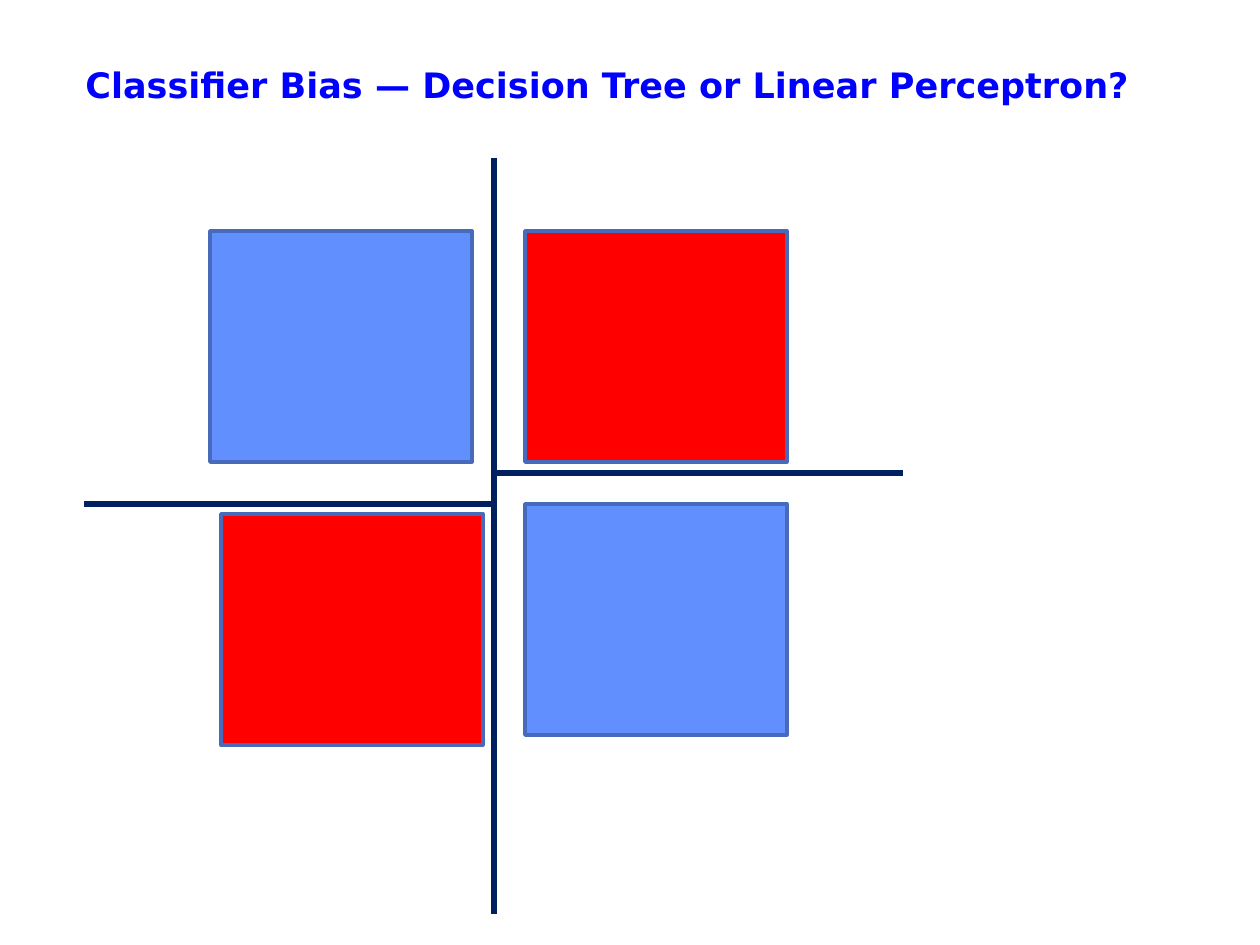
from pptx import Presentation
from pptx.dml.color import RGBColor as RGB
from pptx.enum.shapes import MSO_CONNECTOR as Conn, MSO_SHAPE as Shape
from pptx.enum.text import MSO_ANCHOR as Anchor
from pptx.oxml.ns import qn
from pptx.util import Emu, Pt

PX = 914400 // 126

TITLE = RGB(0x00, 0x00, 0xFF)
BLUE = RGB(0x61, 0x8F, 0xFD)
RED = RGB(0xFF, 0x00, 0x00)
EDGE = RGB(0x48, 0x6A, 0xBB)
NAVY = RGB(0x00, 0x20, 0x60)

WIDE, HIGH = 262, 231   # size of each class region
AXIS = 494              # x of the first split


def px(*nums):
    return [Emu(n * PX) for n in nums]


def add_title(slide, text):
    frame = slide.shapes.add_textbox(*px(73, 42, 1072, 84)).text_frame
    frame.word_wrap = True
    frame.vertical_anchor = Anchor.MIDDLE
    run = frame.paragraphs[0].add_run()
    run.text = text
    font = run.font
    font.name, font.size, font.bold = "DejaVu Sans", Pt(20), True
    font.color.rgb = TITLE


def add_region(slide, left, top, color):
    box = slide.shapes.add_shape(Shape.RECTANGLE, *px(left, top, WIDE, HIGH))
    box.shadow.inherit = False
    box.fill.solid()
    box.fill.fore_color.rgb = color
    box.line.color.rgb = EDGE
    box.line.width = Pt(2)


def add_split(slide, *ends):
    line = slide.shapes.add_connector(Conn.STRAIGHT, *px(*ends))
    line.line.color.rgb = NAVY
    line.line.width = Pt(3)
    props = line.element.spPr
    props.append(props.makeelement(qn("a:effectLst"), {}))


def main():
    deck = Presentation()
    deck.slide_width, deck.slide_height = px(1260, 945)
    slide = deck.slides.add_slide(deck.slide_layouts[6])

    add_title(slide, "Classifier Bias — Decision Tree or Linear Perceptron?")

    # Class regions, alternating like XOR
    for left, top, color in [
        (210, 231, BLUE),
        (525, 504, BLUE),
        (221, 514, RED),
        (525, 231, RED),
    ]:
        add_region(slide, left, top, color)

    # Tree splits: one upright, then one level split on each side
    add_split(slide, AXIS, 158, AXIS, 914)
    add_split(slide, AXIS, 473, 903, 473)
    add_split(slide, 84, 504, AXIS, 504)

    deck.save("out.pptx")


if __name__ == "__main__":
    main()
